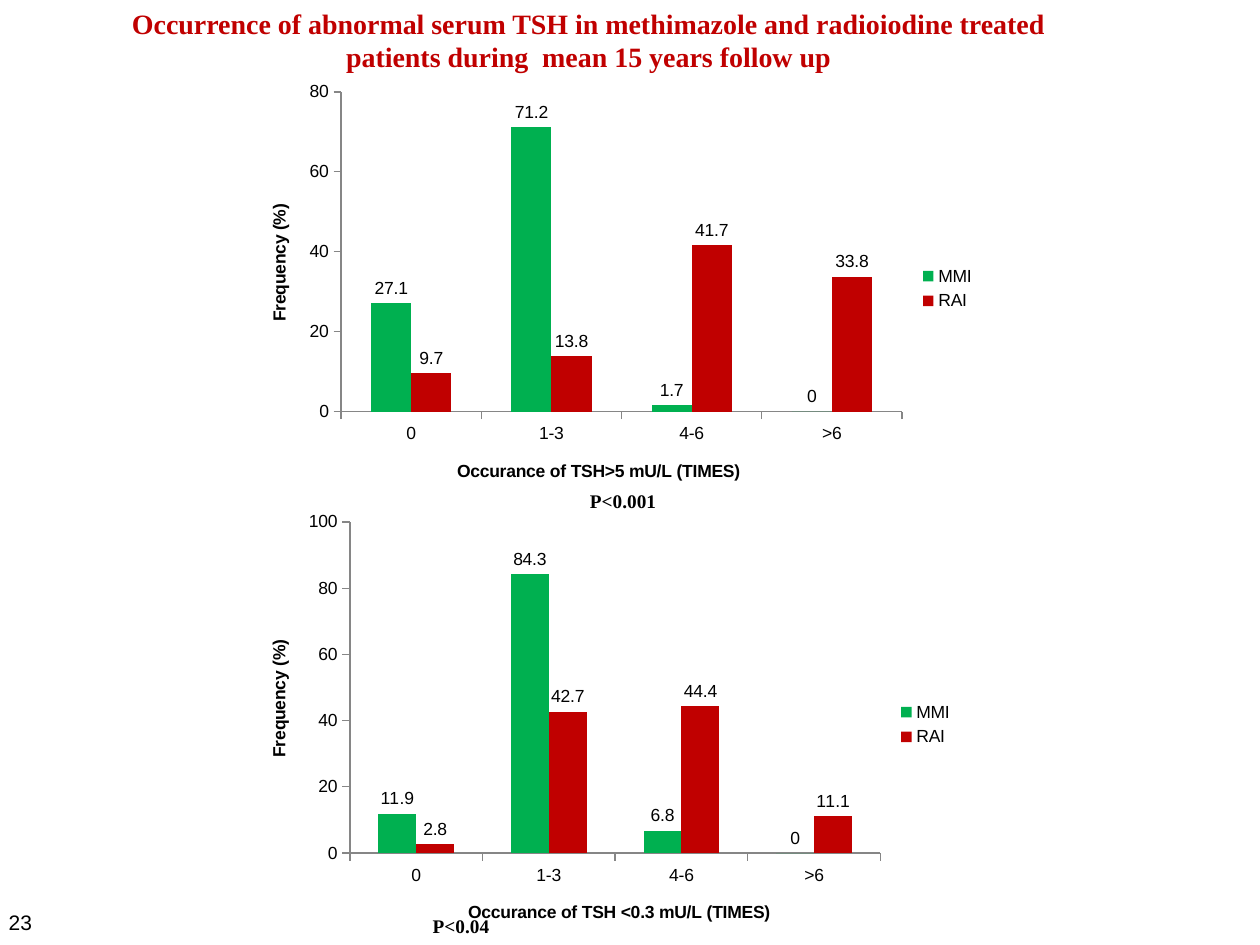
from typing import NamedTuple

from lxml import etree
from pptx import Presentation
from pptx.chart.data import CategoryChartData
from pptx.dml.color import RGBColor
from pptx.enum.chart import (XL_CHART_TYPE, XL_LABEL_POSITION,
                             XL_LEGEND_POSITION, XL_TICK_MARK)
from pptx.enum.text import PP_ALIGN
from pptx.oxml.ns import qn
from pptx.util import Pt

CLUSTERED = XL_CHART_TYPE.COLUMN_CLUSTERED
OUTSIDE_END = XL_LABEL_POSITION.OUTSIDE_END
LEGEND_RIGHT = XL_LEGEND_POSITION.RIGHT
TICK_OUT, TICK_NONE = XL_TICK_MARK.OUTSIDE, XL_TICK_MARK.NONE
CENTER, RIGHT = PP_ALIGN.CENTER, PP_ALIGN.RIGHT

EMU_PER_PX = 914400 / 126
SERIF, SANS = "Times New Roman", "Arial"
BLACK, GRAY, GREEN, RED = "000000", "868686", "00B050", "C00000"
CATEGORIES = ["0", "1-3", "4-6", ">6"]
SERIES_COLORS = {"MMI": GREEN, "RAI": RED}


class Box(NamedTuple):
    x: int
    y: int
    w: int
    h: int


class TshChart(NamedTuple):
    box: Box
    plot: Box  # inner plot area, in slide px
    title: str
    title_x: int
    title_y: int
    top: int
    values: dict[str, list[float]]


class Label(NamedTuple):
    box: Box
    text: str


CHARTS = [
    TshChart(Box(242, 73, 746, 431), Box(341, 92, 561, 320),
             "Occurance of TSH>5 mU/L (TIMES)", 454, 456, 80,
             {"MMI": [27.1, 71.2, 1.7, 0], "RAI": [9.7, 13.8, 41.7, 33.8]}),
    TshChart(Box(242, 504, 724, 441), Box(350, 522, 531, 331),
             "Occurance of TSH <0.3 mU/L (TIMES)", 465, 898, 100,
             {"MMI": [11.9, 84.3, 6.8, 0], "RAI": [2.8, 42.7, 44.4, 11.1]}),
]
P_VALUES = [Label(Box(577, 483, 92, 36), "P<0.001"),
            Label(Box(420, 908, 82, 36), "P<0.04")]


def px(n: int) -> int:
    return round(n * EMU_PER_PX)


def rgb(color: str) -> RGBColor:
    return RGBColor.from_string(color)


def set_font(font, size: int, name: str = SANS, color: str = BLACK,
             bold: bool = False) -> None:
    font.size, font.name, font.bold = Pt(size), name, bold
    font.color.rgb = rgb(color)


def add_text(s, box: Box, text: str, *, size: int, name: str = SERIF,
             color: str = BLACK, bold: bool = True, align=CENTER) -> None:
    tf = s.shapes.add_textbox(*map(px, box)).text_frame
    tf.word_wrap = True
    tf.margin_left = tf.margin_right = 0
    for i, line in enumerate(text.split("\n")):
        p = tf.add_paragraph() if i else tf.paragraphs[0]
        p.alignment = align
        r = p.add_run()
        r.text = line
        set_font(r.font, size, name, color, bold)


def style_axis(axis, title: str) -> None:
    axis.has_major_gridlines = False
    axis.major_tick_mark, axis.minor_tick_mark = TICK_OUT, TICK_NONE
    axis.format.line.color.rgb = rgb(GRAY)
    axis.format.line.width = Pt(0.75)
    set_font(axis.tick_labels.font, 10)
    p = axis.axis_title.text_frame.paragraphs[0]
    r = p.add_run()
    r.text = title
    set_font(r.font, 10, bold=True)


def set_layout(parent, index: int, settings: dict) -> None:
    for old in parent.findall(qn("c:layout")):
        parent.remove(old)
    layout = etree.Element(qn("c:layout"))
    parent.insert(index, layout)
    manual = etree.SubElement(layout, qn("c:manualLayout"))
    for tag, value in settings.items():
        etree.SubElement(manual, qn("c:" + tag)).set("val", str(value))


def place_parts(chart, spec: TshChart) -> None:
    box, plot = spec.box, spec.plot
    edges = {"xMode": "edge", "yMode": "edge"}

    def offset(x: int, y: int) -> dict:
        return {"x": round((x - box.x) / box.w, 3),
                "y": round((y - box.y) / box.h, 3)}

    area = chart.element.find(".//" + qn("c:plotArea"))
    set_layout(area, 0, {"layoutTarget": "inner", **edges,
                         **offset(plot.x, plot.y),
                         "w": round(plot.w / box.w, 3),
                         "h": round(plot.h / box.h, 3)})
    title = area.find(qn("c:catAx")).find(qn("c:title"))
    set_layout(title, 1, {**edges, **offset(spec.title_x, spec.title_y)})


def add_tsh_chart(s, spec: TshChart) -> None:
    data = CategoryChartData()
    data.categories = CATEGORIES
    for name, values in spec.values.items():
        data.add_series(name, values)
    chart = s.shapes.add_chart(CLUSTERED, *map(px, spec.box), data).chart
    set_font(chart.font, 10)
    chart.has_title = False
    chart.has_legend = True
    chart.legend.position = LEGEND_RIGHT
    chart.legend.include_in_layout = False
    set_font(chart.legend.font, 10)

    # Columns and their values
    plot = chart.plots[0]
    plot.gap_width, plot.overlap = 150, 0
    plot.vary_by_categories = False
    for series in plot.series:
        series.format.fill.solid()
        series.format.fill.fore_color.rgb = rgb(SERIES_COLORS[series.name])
        series.invert_if_negative = False
        labels = series.data_labels
        labels.show_value = True
        labels.position = OUTSIDE_END
        set_font(labels.font, 10)

    # Axes
    style_axis(chart.category_axis, spec.title)
    style_axis(chart.value_axis, "Frequency (%)")
    chart.value_axis.minimum_scale = 0
    chart.value_axis.maximum_scale = spec.top
    chart.value_axis.major_unit = 20
    place_parts(chart, spec)


def main() -> None:
    prs = Presentation()
    prs.slide_width, prs.slide_height = px(1260), px(945)
    s = prs.slides.add_slide(prs.slide_layouts[6])

    # Slide number
    add_text(s, Box(0, 903, 32, 40), "23", size=12, name=SANS, bold=False,
             align=RIGHT)

    # Charts
    for spec in CHARTS:
        add_tsh_chart(s, spec)

    # Heading and p-values
    add_text(s, Box(113, 0, 951, 81),
             "Occurrence of abnormal serum TSH in methimazole and radioiodine "
             "treated\npatients during  mean 15 years follow up",
             size=16, color=RED)
    for label in P_VALUES:
        add_text(s, label.box, label.text, size=11)

    prs.save("out.pptx")


if __name__ == "__main__":
    main()
